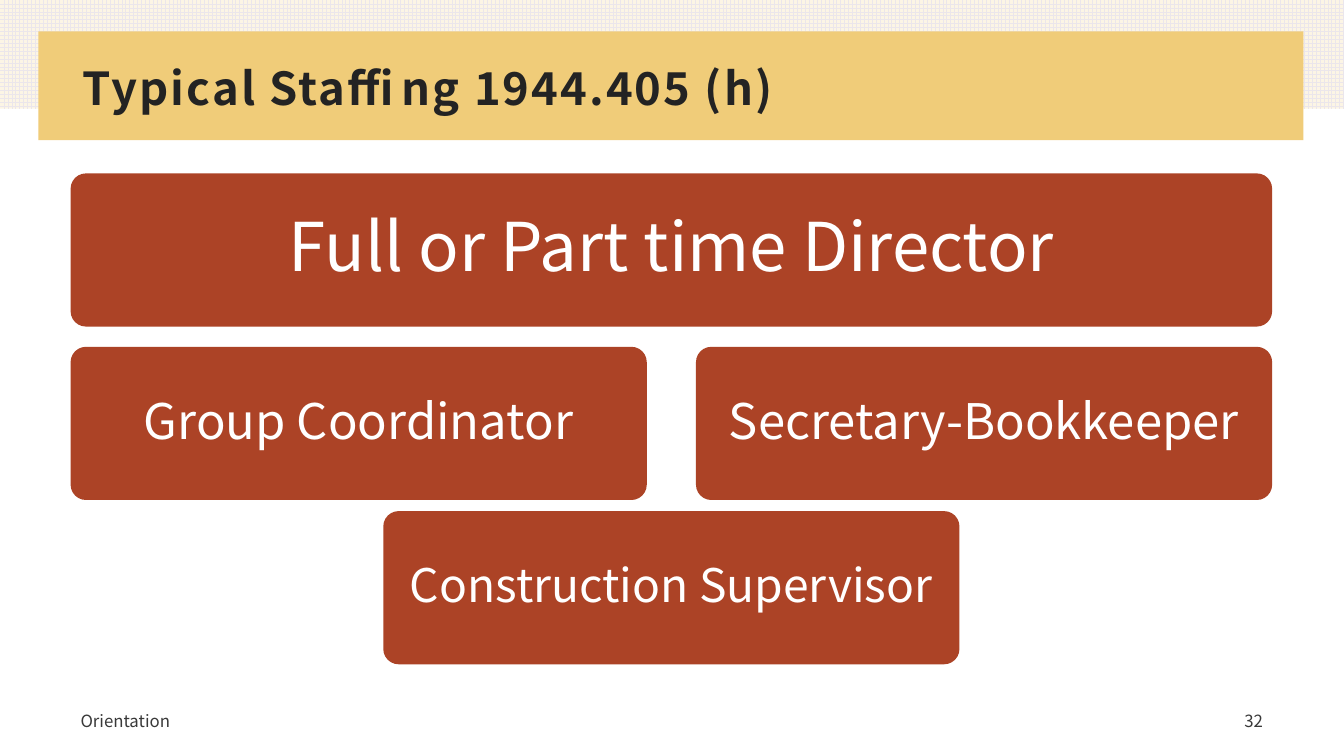
from pptx import Presentation
from pptx import util as u
from pptx.dml.color import RGBColor
from pptx.enum import dml, shapes, text

TITLE = "Typical Staffing 1944.405 (h)"
# Each row of the chart: top in cm, then its roles as (label, points)
ROWS = [
    (4.37, [("Full or Part time Director", 48)]),
    (8.74, [("Group Coordinator", 35), ("Secretary-Bookkeeper", 35)]),
    (12.88, [("Construction Supervisor", 33)]),
]
# Footer: label, left, width, alignment
FOOT = [
    ("Orientation", 1.78, 17.48, text.PP_ALIGN.LEFT),
    ("32", 29.74, 2.34, text.PP_ALIGN.RIGHT),
]

FONT = "Noto Sans CJK JP"
GOLD = RGBColor(0xF0, 0xCC, 0x79)
RUST = RGBColor(0xAC, 0x43, 0x26)
WHITE = RGBColor(0xFF, 0xFF, 0xFF)
INK = RGBColor(0x23, 0x23, 0x23)
GREY = RGBColor(0x39, 0x39, 0x39)
LILAC = RGBColor(0xEB, 0xE6, 0xEB)
CREAM = RGBColor(0xFC, 0xF5, 0xE5)

WIDE, HIGH = 33.87, 19.05
LEFT, SPAN = 1.78, 30.28
HALF, TALL = 14.63, 3.86
GAP = 1.24
HALF = (SPAN - GAP) / 2


def add_box(kind, left, top, width, height):
    box = slide.shapes.add_shape(
        kind, u.Cm(left), u.Cm(top), u.Cm(width), u.Cm(height))
    box.shadow.inherit = False
    box.line.fill.background()
    return box


def write(shape, label, size, color, align, inset=None):
    frame = shape.text_frame
    frame.text = label
    frame.word_wrap = True
    frame.auto_size = text.MSO_AUTO_SIZE.NONE
    frame.vertical_anchor = text.MSO_ANCHOR.MIDDLE
    if inset is not None:
        frame.margin_left = frame.margin_right = u.Cm(inset)
        frame.margin_top = frame.margin_bottom = u.Cm(inset)
    para = frame.paragraphs[0]
    para.alignment = align
    font = para.runs[0].font
    font.name, font.size = FONT, u.Pt(size)
    font.color.rgb = color
    return para


deck = Presentation()
deck.slide_width, deck.slide_height = u.Cm(WIDE), u.Cm(HIGH)
slide = deck.slides.add_slide(deck.slide_layouts[5])

# Patterned strip and title band
strip = add_box(shapes.MSO_SHAPE.RECTANGLE, 0, 0, WIDE, 2.74)
strip.fill.patterned()
strip.fill.pattern = dml.MSO_PATTERN.LARGE_GRID
strip.fill.fore_color.rgb = LILAC
strip.fill.back_color.rgb = CREAM
band = add_box(shapes.MSO_SHAPE.RECTANGLE, 0.97, 0.79, 31.88, 2.74)
band.fill.solid()
band.fill.fore_color.rgb = GOLD

# Title, brought in front of the band
title = slide.shapes.title
title.left, title.top = u.Cm(LEFT), u.Cm(1.32)
title.width, title.height = u.Cm(SPAN), u.Cm(1.91)
para = write(title, TITLE, 32.4, INK, text.PP_ALIGN.LEFT, 0.3)
title.text_frame.margin_bottom = u.Cm(0.25)
para.line_spacing = 0.9
para.runs[0].font.bold = True
para.runs[0]._r.get_or_add_rPr().set("spc", "150")
slide.shapes._spTree.append(title._element)

# Staff boxes: the lead spans the page, the others are half width and centred
for row, (top, roles) in enumerate(ROWS):
    width = SPAN if row == 0 else HALF
    used = len(roles) * width + (len(roles) - 1) * GAP
    start = LEFT + (SPAN - used) / 2
    for col, (label, size) in enumerate(roles):
        left = start + col * (width + GAP)
        box = add_box(shapes.MSO_SHAPE.ROUNDED_RECTANGLE,
                      left, top, width, TALL)
        box.adjustments[0] = 0.1
        box.fill.solid()
        box.fill.fore_color.rgb = RUST
        para = write(box, label, size, WHITE, text.PP_ALIGN.CENTER, 0.4)
        para.line_spacing = 0.9

# Footer
for label, left, width, align in FOOT:
    note = slide.shapes.add_textbox(
        u.Cm(left), u.Cm(17.65), u.Cm(width), u.Cm(1.02))
    para = write(note, label, 12, GREY, align)
    para.space_after = u.Pt(6)

deck.save("out.pptx")
